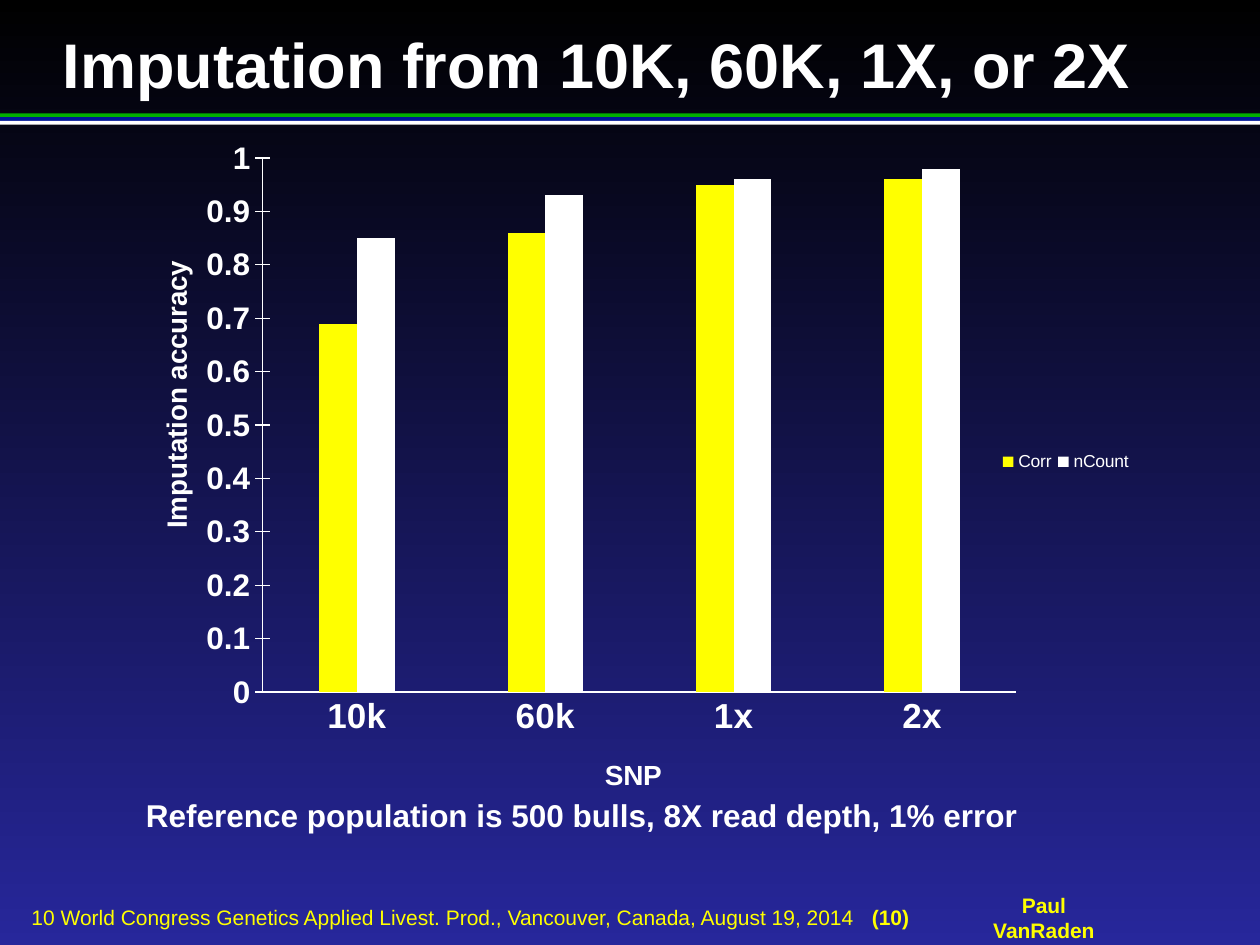
from lxml import etree
from pptx import Presentation
from pptx.chart.data import CategoryChartData
from pptx.dml.color import RGBColor
from pptx.enum.chart import XL_CHART_TYPE, XL_LEGEND_POSITION, XL_TICK_MARK
from pptx.enum.shapes import MSO_SHAPE
from pptx.enum.text import MSO_ANCHOR, PP_ALIGN
from pptx.oxml.ns import qn
from pptx.util import Inches, Pt

COLUMNS = XL_CHART_TYPE.COLUMN_CLUSTERED
RIGHT = XL_LEGEND_POSITION.RIGHT
NO_TICK, CROSS = XL_TICK_MARK.NONE, XL_TICK_MARK.CROSS
RECT = MSO_SHAPE.RECTANGLE
TOP, MIDDLE = MSO_ANCHOR.TOP, MSO_ANCHOR.MIDDLE
LEFT, CENTER = PP_ALIGN.LEFT, PP_ALIGN.CENTER

BLACK = RGBColor(0x00, 0x00, 0x00)
INDIGO = RGBColor(0x27, 0x27, 0x9B)
WHITE = RGBColor(0xFF, 0xFF, 0xFF)
YELLOW = RGBColor(0xFF, 0xFF, 0x00)
GREEN = RGBColor(0x01, 0xAF, 0x00)
BLUE = RGBColor(0x00, 0x17, 0x99)

W, H = 10, 7.5
FONT = "Arial"
RULE_TOP, RULE_STEP = 0.9, 0.03
RULES = [GREEN, BLUE, WHITE]
FOOTER_TAB = 6.67

TEXTS = [
    dict(box=(0.5, 0.2, 9, 0.6), runs=[("Imputation from 10K, 60K, 1X, or 2X", True)],
         size=36, color=WHITE, anchor=TOP, align=LEFT, inset=(0, 0)),
    dict(box=(1.06, 6.27, 7.19, 0.4),
         runs=[("Reference population is 500 bulls, 8X read depth, 1% error", True)],
         size=18, color=WHITE, anchor=TOP, align=LEFT, inset=(0.1, 0.05)),
    dict(box=(0.25, 7.18, 7.27, 0.2),
         runs=[("10 World Congress Genetics Applied Livest. Prod., Vancouver, Canada, "
                "August 19, 2014", False), ("\t(10)", True)],
         size=12, color=YELLOW, anchor=MIDDLE, align=LEFT, inset=(0, 0), tab=FOOTER_TAB),
    dict(box=(7.69, 7.18, 1.19, 0.2), runs=[("Paul VanRaden", True)],
         size=12, color=YELLOW, anchor=MIDDLE, align=CENTER, inset=(0, 0)),
]

CHART_BOX = (1.14, 0.99, 7.87, 5.35)
CATEGORIES = ["10k", "60k", "1x", "2x"]
SERIES = [
    ("Corr", (0.69, 0.86, 0.95, 0.96), YELLOW),
    ("nCount", (0.85, 0.93, 0.96, 0.98), WHITE),
]
LAYOUTS = [
    ("c:plotArea", None, dict(layoutTarget="inner", xMode="edge", yMode="edge",
                              x=0.12, y=0.05, w=0.76, h=0.8)),
    ("c:catAx/c:title", "c:tx", dict(xMode="edge", yMode="edge", x=0.46, y=0.94)),
    ("c:valAx/c:title", "c:tx", dict(xMode="edge", yMode="edge", x=0.01, y=0.2)),
    ("c:legend", "c:legendPos", dict(xMode="edge", yMode="edge",
                                     x=0.86, y=0.48, w=0.14, h=0.05)),
]


def inches(box):
    return [Inches(v) for v in box]


def style(font, **values):
    for name, value in dict(name=FONT, **values).items():
        setattr(font, name, value)
    font.color.rgb = WHITE


def add_text(s, item):
    tf = s.shapes.add_textbox(*inches(item["box"])).text_frame
    side, edge = inches(item["inset"])
    for name, value in dict(word_wrap=True, vertical_anchor=item["anchor"],
                            margin_left=side, margin_right=side,
                            margin_top=edge, margin_bottom=edge).items():
        setattr(tf, name, value)
    p = tf.paragraphs[0]
    p.alignment = item["align"]
    if "tab" in item:
        tabs = etree.SubElement(p._p.get_or_add_pPr(), qn("a:tabLst"))
        etree.SubElement(tabs, qn("a:tab"), pos=str(Inches(item["tab"])), algn="l")
    for text, bold in item["runs"]:
        r = p.add_run()
        r.text = text
        style(r.font, size=Pt(item["size"]), bold=bold)
        r.font.color.rgb = item["color"]


def set_layout(chart, target, after, values):
    parent = chart.element.xpath(f".//{target}")[0]
    for old in parent.findall(qn("c:layout")):
        parent.remove(old)
    layout = etree.Element(qn("c:layout"))
    manual = etree.SubElement(layout, qn("c:manualLayout"))
    for name, value in values.items():
        etree.SubElement(manual, qn(f"c:{name}"), val=str(value))
    if after:
        parent.find(qn(after)).addnext(layout)
    else:
        parent.insert(0, layout)


def style_axis(axis, title, size, tick):
    axis.has_major_gridlines = False
    axis.major_tick_mark = tick
    axis.minor_tick_mark = NO_TICK
    axis.format.line.color.rgb = WHITE
    axis.format.line.width = Pt(0.75)
    style(axis.tick_labels.font, size=Pt(size), bold=True)
    p = axis.axis_title.text_frame.paragraphs[0]
    r = p.add_run()
    r.text = title
    style(r.font, size=Pt(16), bold=True)


def add_chart(s):
    data = CategoryChartData()
    data.categories = CATEGORIES
    for name, values, _ in SERIES:
        data.add_series(name, values)
    chart = s.shapes.add_chart(COLUMNS, *inches(CHART_BOX), data).chart
    chart.has_title = False
    style(chart.font, size=Pt(10))
    plot = chart.plots[0]
    plot.gap_width, plot.overlap, plot.vary_by_categories = 300, 0, False
    for series, (_, _, color) in zip(plot.series, SERIES):
        series.format.fill.solid()
        series.format.fill.fore_color.rgb = color
    style_axis(chart.category_axis, "SNP", 20, NO_TICK)
    axis = chart.value_axis
    style_axis(axis, "Imputation accuracy", 18, CROSS)
    axis.minimum_scale, axis.maximum_scale, axis.major_unit = 0, 1, 0.1
    axis.tick_labels.number_format = "General"
    axis.tick_labels.number_format_is_linked = False
    chart.has_legend = True
    chart.legend.position = RIGHT
    chart.legend.include_in_layout = False
    style(chart.legend.font, size=Pt(10))
    for layout in LAYOUTS:
        set_layout(chart, *layout)


def main():
    prs = Presentation()
    prs.slide_width, prs.slide_height = Inches(W), Inches(H)
    s = prs.slides.add_slide(prs.slide_layouts[6])
    fill = s.background.fill
    fill.gradient()
    fill.gradient_angle = 270
    for stop, color in zip(fill.gradient_stops, (BLACK, INDIGO)):
        stop.color.rgb = color
    for i, color in enumerate(RULES):
        sp = s.shapes.add_shape(RECT, *inches((0, RULE_TOP + i * RULE_STEP, W, RULE_STEP)))
        sp.shadow.inherit = False
        sp.fill.solid()
        sp.fill.fore_color.rgb = color
        sp.line.fill.background()
    add_chart(s)
    for item in TEXTS:
        add_text(s, item)
    prs.save("out.pptx")


if __name__ == "__main__":
    main()
